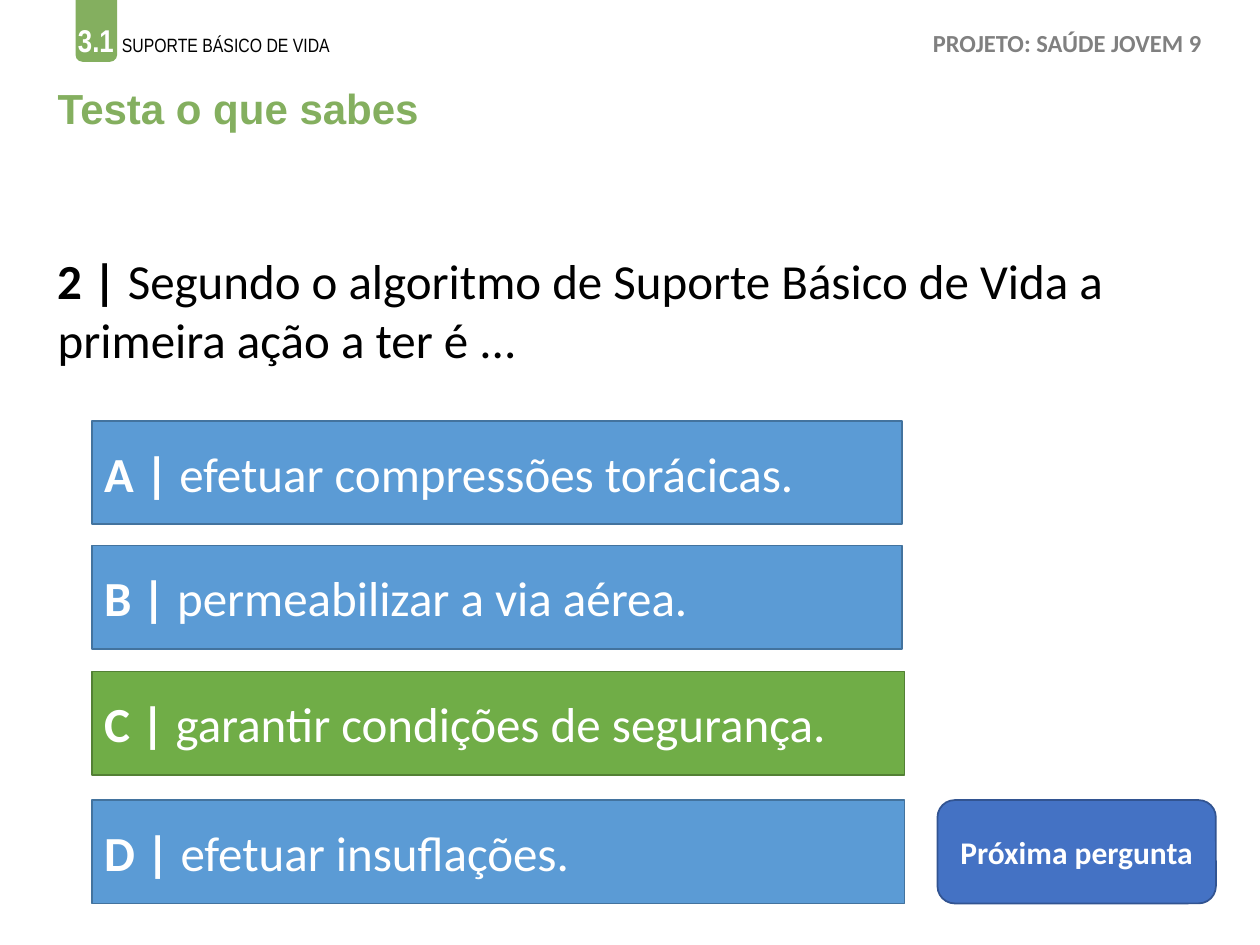
"""Build a quiz slide with four answers and a button for the next question."""
from pptx import Presentation
from pptx import util as u
from pptx.dml.color import RGBColor
from pptx.enum import shapes, text

WHITE = RGBColor(0xFF, 0xFF, 0xFF)
BLACK = RGBColor(0x00, 0x00, 0x00)
GRAY = RGBColor(0x80, 0x80, 0x80)
LEAF = RGBColor(0x84, 0xAF, 0x5F)
LIME = RGBColor(0xAF, 0xC4, 0x39)
BLUE = RGBColor(0x5B, 0x9B, 0xD5)
BLUE_EDGE = RGBColor(0x43, 0x73, 0x9E)
GREEN = RGBColor(0x70, 0xAD, 0x47)
GREEN_EDGE = RGBColor(0x53, 0x80, 0x35)
NAVY = RGBColor(0x44, 0x72, 0xC4)
NAVY_EDGE = RGBColor(0x32, 0x54, 0x91)

RECTANGLE = shapes.MSO_SHAPE.RECTANGLE
ROUNDED = shapes.MSO_SHAPE.ROUNDED_RECTANGLE
TOP = text.MSO_ANCHOR.TOP
MIDDLE = text.MSO_ANCHOR.MIDDLE
LEFT = text.PP_ALIGN.LEFT
CENTER = text.PP_ALIGN.CENTER


def add_run(paragraph, content, size=28, color=WHITE, bold=False, font="Calibri"):
    run = paragraph.add_run()
    run.text = content
    run.font.size = u.Pt(size)
    run.font.color.rgb = color
    run.font.bold = bold
    run.font.name = font


class QuizSlide:
    def __init__(self, slide):
        self.slide = slide

    def first_paragraph(self, shape, anchor, align):
        frame = shape.text_frame
        frame.word_wrap = True
        frame.vertical_anchor = anchor
        paragraph = frame.paragraphs[0]
        paragraph.alignment = align
        return paragraph

    def text_box(self, left, top, width, height, anchor=TOP, align=LEFT):
        shape = self.slide.shapes.add_textbox(
            u.Inches(left), u.Inches(top), u.Inches(width), u.Inches(height))
        return self.first_paragraph(shape, anchor, align)

    def box(self, kind, left, top, width, height, fill, edge=None, align=LEFT):
        shape = self.slide.shapes.add_shape(
            kind, u.Inches(left), u.Inches(top), u.Inches(width), u.Inches(height))
        shape.shadow.inherit = False
        shape.fill.solid()
        shape.fill.fore_color.rgb = fill
        if edge is None:
            shape.line.fill.background()
        else:
            shape.line.color.rgb = edge
            shape.line.width = u.Pt(1)
        return self.first_paragraph(shape, MIDDLE, align)

    def answer(self, letter, content, top, width, fill=BLUE, edge=BLUE_EDGE):
        paragraph = self.box(RECTANGLE, 0.73, top, width, 0.82, fill, edge)
        add_run(paragraph, f"{letter} | ", bold=True)
        add_run(paragraph, content)


def main():
    presentation = Presentation()
    presentation.slide_width = u.Inches(10)
    presentation.slide_height = u.Inches(7.5)
    quiz = QuizSlide(presentation.slides.add_slide(presentation.slide_layouts[6]))

    quiz.box(ROUNDED, 0.6, -0.13, 0.33, 0.62, LEAF)
    chapter = quiz.text_box(0.52, 0.09, 7.15, 0.44)
    add_run(chapter, "3.1", 18, WHITE, True, "Arial Narrow")
    add_run(chapter, " ", 20, LIME, True, "Arial Narrow")
    add_run(chapter, "SUPORTE BÁSICO DE VIDA", 11, BLACK, font="Arial Narrow")
    book = quiz.text_box(7.18, 0.17, 2.58, 0.34, align=CENTER)
    add_run(book, "PROJETO: SAÚDE JOVEM 9", 14, GRAY, True)

    title = quiz.text_box(0.36, 0.57, 9.29, 0.62, MIDDLE)
    title.line_spacing = 0.9
    add_run(title, "Testa o que sabes", 24, LEAF, True, "Arial")

    question = quiz.text_box(0.36, 1.94, 9.29, 1.04)
    add_run(question, "2 |", color=BLACK, bold=True)
    add_run(question, " Segundo o algoritmo de Suporte Básico de Vida a primeira ação a ter é ...",
            color=BLACK)

    quiz.answer("A", "efetuar compressões torácicas.", 3.34, 6.43)
    quiz.answer("B", "permeabilizar a via aérea.", 4.33, 6.43)
    quiz.answer("C", "garantir condições de segurança.", 5.33, 6.45, GREEN, GREEN_EDGE)
    quiz.answer("D", "efetuar insuflações.", 6.35, 6.45)

    button = quiz.box(ROUNDED, 7.44, 6.35, 2.21, 0.82, NAVY, NAVY_EDGE, CENTER)
    add_run(button, "Próxima pergunta", 18, bold=True)

    presentation.save("out.pptx")


if __name__ == "__main__":
    main()
